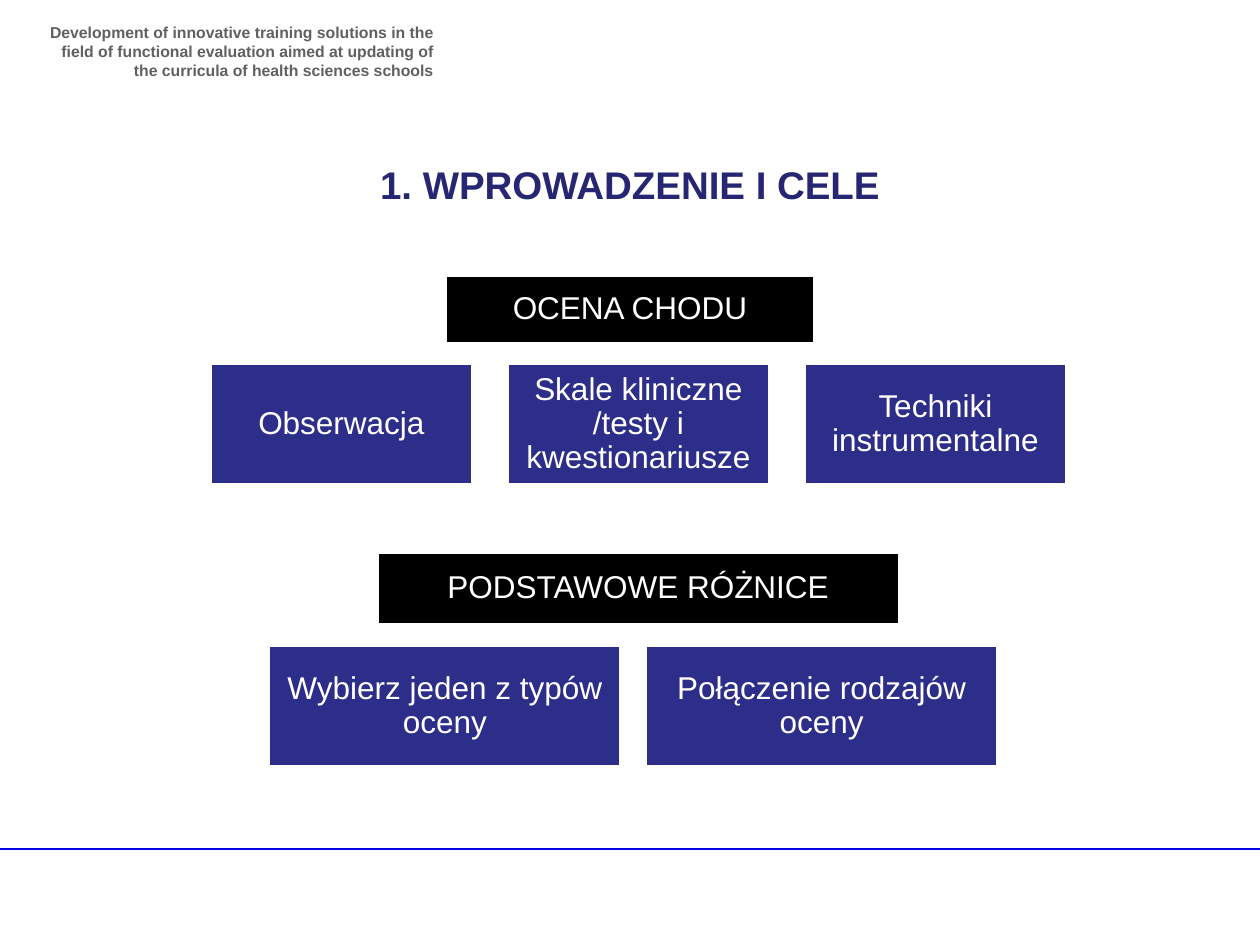
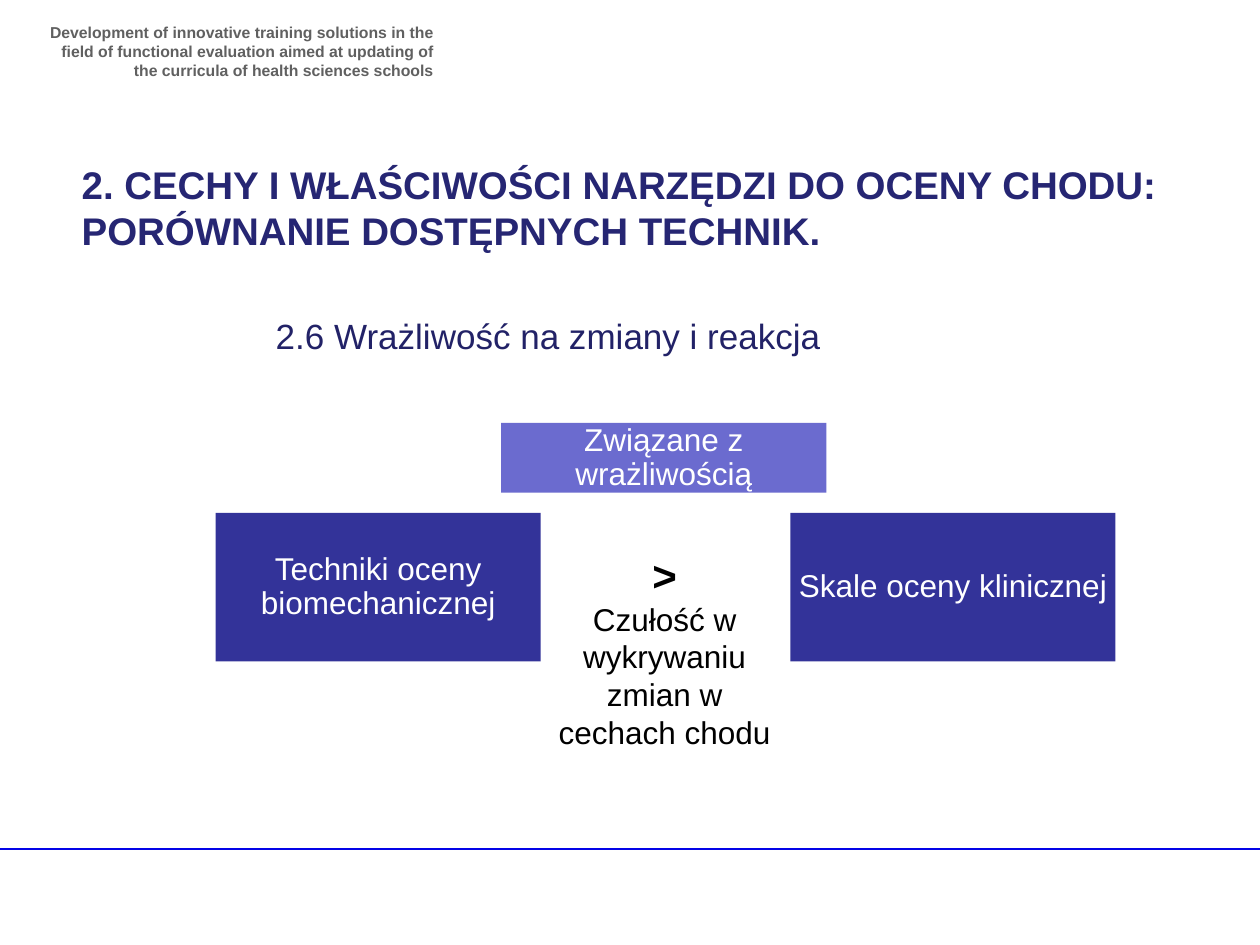
from dataclasses import dataclass
from lxml import etree
from pptx import Presentation
from pptx.dml.color import RGBColor as RGB
from pptx.enum.shapes import MSO_CONNECTOR as Conn, MSO_SHAPE as Form
from pptx.enum.text import MSO_ANCHOR as Anchor, MSO_AUTO_SIZE as Fit, PP_ALIGN as Align
from pptx.oxml.ns import qn
from pptx.util import Pt


@dataclass(frozen=True)
class Theme:
    font: str = "Arial"
    white: str = "FFFFFF"
    black: str = "000000"
    gray: str = "606060"
    rule: str = "0404E6"
    title: str = "262673"
    sub: str = "222267"
    navy: str = "2D2D8A"
    blue: str = "333399"
    lilac: str = "6B6BCF"
    small: int = 9
    body: int = 18
    lead: int = 20
    head: int = 22
    sign: int = 24


T = Theme()
WIDTH, HEIGHT = 720, 540
PROJECT = ("Development of innovative training solutions in the ﬁeld of functional "
           "evaluation aimed at updating of the curricula of health sciences schools")


def add_run(para, text, size, color, bold=False):
    run = para.add_run()
    run.text = text
    font = run.font
    font.name, font.size, font.bold = T.font, Pt(size), bold
    font.color.rgb = RGB.from_string(color)


def add_text(slide, area, parts, align=Align.LEFT, fit=Fit.NONE):
    frame = slide.shapes.add_textbox(*map(Pt, area)).text_frame
    frame.word_wrap = True
    frame.auto_size = fit
    for i, part in enumerate(parts):
        para = frame.add_paragraph() if i else frame.paragraphs[0]
        para.alignment = align
        add_run(para, *part)


def add_box(slide, area, text, color, edge=True):
    box = slide.shapes.add_shape(Form.RECTANGLE, *map(Pt, area))
    box.shadow.inherit = False
    box.fill.solid()
    box.fill.fore_color.rgb = RGB.from_string(color)
    if edge:
        box.line.color.rgb = RGB.from_string(T.white)
        box.line.width = Pt(2)
    else:
        box.line.fill.background()
    frame = box.text_frame
    frame.word_wrap = True
    frame.vertical_anchor = Anchor.MIDDLE
    frame.margin_left = frame.margin_right = Pt(0.72)
    frame.margin_top = frame.margin_bottom = Pt(0.72)
    para = frame.paragraphs[0]
    para.alignment = Align.CENTER
    para.line_spacing = 0.9
    add_run(para, text, T.body, T.white)


def add_row(slide, left, top, width, height, step, labels, color, edge=True):
    for i, label in enumerate(labels):
        add_box(slide, (left + i * step, top, width, height), label, color, edge)


def add_rule(slide):
    rule = slide.shapes.add_connector(Conn.STRAIGHT, Pt(-3.6), Pt(485.3), Pt(WIDTH), Pt(485.3))
    rule.line.color.rgb = RGB.from_string(T.rule)
    rule.line.width = Pt(1)
    etree.SubElement(rule._element.spPr, qn("a:effectLst"))


def add_page(deck, title, area, align):
    slide = deck.slides.add_slide(deck.slide_layouts[6])
    add_rule(slide)
    add_text(slide, (20, 9.4, 234.7, 33.8), [(PROJECT, T.small, T.gray, True)], Align.RIGHT)
    add_text(slide, area, [(title, T.head, T.title, True)], align, Fit.SHAPE_TO_FIT_TEXT)
    return slide


def add_intro(deck):
    slide = add_page(deck, "1. WPROWADZENIE I CELE", (39.6, 88.6, 640.8, 33.8), Align.CENTER)
    add_box(slide, (254.2, 157, 211.7, 39.6), "OCENA CHODU", T.black)
    add_row(slide, 120.2, 207.4, 149.8, 69.8, 169.7,
            ["Obserwacja", "Skale kliniczne /testy i kwestionariusze",
             "Techniki instrumentalne"], T.navy)
    add_box(slide, (215.3, 315.4, 298.8, 41.8), "PODSTAWOWE RÓŻNICE", T.black)
    add_row(slide, 153.4, 368.6, 201.6, 69.8, 215.3,
            ["Wybierz jeden z typów oceny", "Połączenie rodzajów oceny"], T.navy)


def add_tools(deck):
    slide = add_page(deck, "2. CECHY I WŁAŚCIWOŚCI NARZĘDZI DO OCENY CHODU: "
                     "PORÓWNANIE DOSTĘPNYCH TECHNIK.", (39.6, 88.6, 654.5, 60.5), Align.LEFT)
    add_row(slide, 123.2, 293.1, 185.8, 84.8, 328.4,
            ["Techniki oceny biomechanicznej", "Skale oceny klinicznej"], T.blue, False)
    add_box(slide, (286.4, 241.6, 185.8, 40), "Związane z wrażliwością", T.lilac, False)
    add_text(slide, (308.9, 310.3, 141.8, 123.8),
             [(">", T.sign, T.black, True),
              ("Czułość w wykrywaniu zmian w cechach chodu", T.body, T.black)],
             Align.CENTER, Fit.SHAPE_TO_FIT_TEXT)
    add_text(slide, (150.5, 176.4, 422.6, 55.4),
             [("2.6 Wrażliwość na zmiany i reakcja", T.lead, T.sub)])


def main():
    deck = Presentation()
    deck.slide_width, deck.slide_height = Pt(WIDTH), Pt(HEIGHT)
    add_intro(deck)
    add_tools(deck)
    deck.save("out.pptx")


if __name__ == "__main__":
    main()
